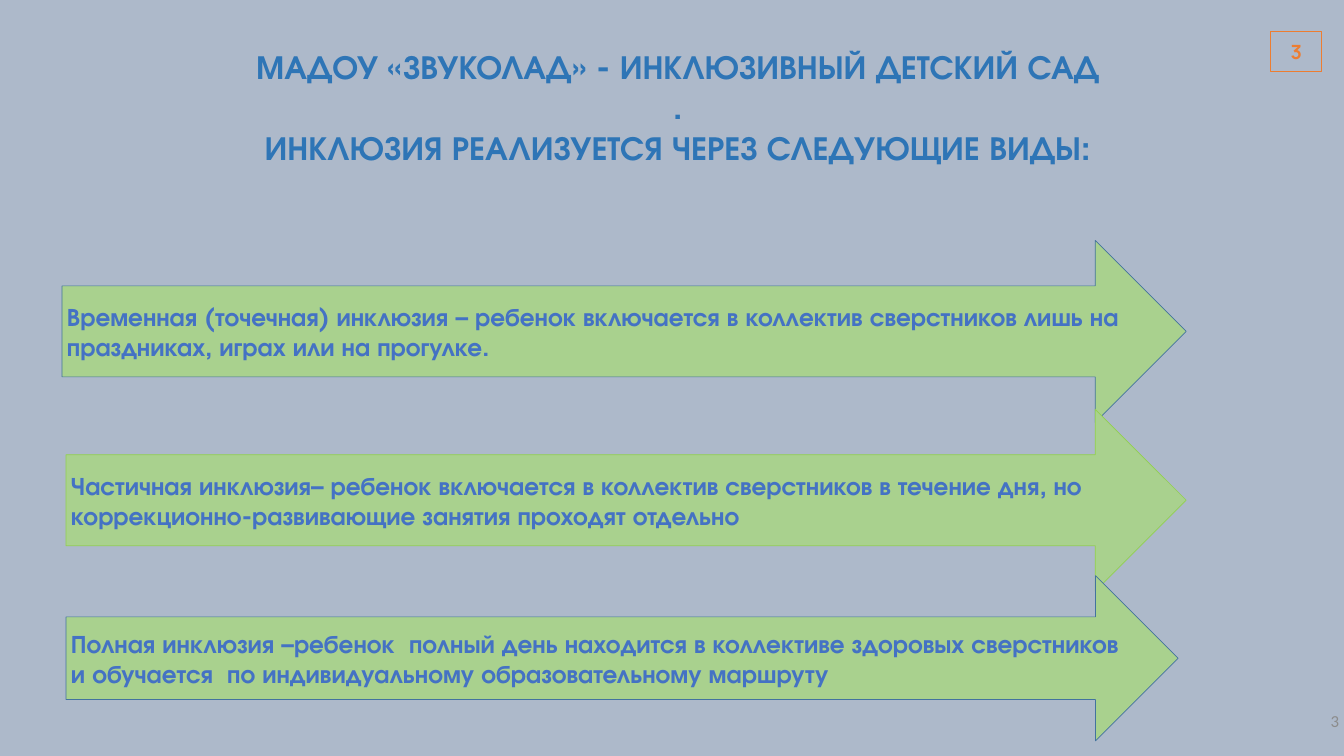
from dataclasses import dataclass

from pptx import Presentation
from pptx import util as u
from pptx.dml.color import RGBColor
from pptx.enum import shapes, text


@dataclass(frozen=True)
class Theme:
    background: str = "ADB9CA"
    arrow_fill: str = "A9D18E"
    blue_line: str = "43739E"
    green_line: str = "92D050"
    accent: str = "ED7D31"
    title: str = "2E75B6"
    body: str = "4472C4"
    muted: str = "8C8C8C"
    heading_font: str = "TeX Gyre Adventor"
    badge_font: str = "Manrope"
    number_font: str = "Calibri"
    title_size: int = 48
    body_size: int = 36
    badge_size: int = 28
    number_size: int = 24


class SlideBuilder:
    """Holds the theme and the current slide."""

    def __init__(self, prs, theme):
        self.theme = theme
        self.s = prs.slides.add_slide(prs.slide_layouts[5])
        fill = self.s.background.fill
        fill.solid()
        fill.fore_color.rgb = RGBColor.from_string(theme.background)

    def set_text(self, sp, lines, font, size, color, align, bold=True, **frame):
        tf = sp.text_frame
        frame = {"word_wrap": True, "auto_size": text.MSO_AUTO_SIZE.NONE,
                 "vertical_anchor": text.MSO_ANCHOR.MIDDLE, **frame}
        for name, value in frame.items():
            setattr(tf, name, value)
        tf.text = "\n".join(lines)
        for p in tf.paragraphs:
            p.alignment = align
            for r in p.runs:
                for name, value in {"name": font, "size": u.Pt(size), "bold": bold}.items():
                    setattr(r.font, name, value)
                r.font.color.rgb = RGBColor.from_string(color)

    def shape(self, kind, box, line, width, fill=None):
        sp = self.s.shapes.add_shape(kind, *map(u.Inches, box))
        sp.shadow.inherit = False
        if fill:
            sp.fill.solid()
            sp.fill.fore_color.rgb = RGBColor.from_string(fill)
        else:
            sp.fill.background()
        sp.line.color.rgb = RGBColor.from_string(line)
        sp.line.width = u.Pt(width)
        return sp

    def title(self, box, lines):
        t, sp = self.theme, self.s.shapes.title
        for name, value in zip(("left", "top", "width", "height"), box):
            setattr(sp, name, u.Inches(value))
        self.set_text(sp, lines, t.heading_font, t.title_size, t.title,
                      text.PP_ALIGN.CENTER, vertical_anchor=text.MSO_ANCHOR.TOP)

    def arrow(self, box, line, words):
        t = self.theme
        sp = self.shape(shapes.MSO_SHAPE.RIGHT_ARROW, box, line, 1, t.arrow_fill)
        self.set_text(sp, [words], t.heading_font, t.body_size, t.body, text.PP_ALIGN.LEFT)

    def badge(self, box, words):
        t = self.theme
        sp = self.shape(shapes.MSO_SHAPE.RECTANGLE, box, t.accent, 1.5)
        self.set_text(sp, [words], t.badge_font, t.badge_size, t.accent,
                      text.PP_ALIGN.CENTER, word_wrap=False)

    def page_number(self, box, words):
        t = self.theme
        sp = self.s.shapes.add_textbox(*map(u.Inches, box))
        self.set_text(sp, [words], t.number_font, t.number_size, t.muted,
                      text.PP_ALIGN.RIGHT, bold=False)


def main():
    prs = Presentation()
    prs.slide_width, prs.slide_height = u.Inches(26.66), u.Inches(15)
    theme = Theme()
    slide = SlideBuilder(prs, theme)

    # Heading
    slide.title((0.79, 0.86, 25.31, 2.52), [
        "МАДОУ «ЗВУКОЛАД» - ИНКЛЮЗИВНЫЙ ДЕТСКИЙ САД",
        ".",
        "ИНКЛЮЗИЯ РЕАЛИЗУЕТСЯ ЧЕРЕЗ СЛЕДУЮЩИЕ ВИДЫ:",
    ])

    # Kinds of inclusion
    inclusion_kinds = [
        ((1.23, 4.77, 22.3, 3.61), theme.blue_line,
         "Временная (точечная) инклюзия – ребенок включается в коллектив "
         "сверстников лишь на праздниках, играх или на прогулке."),
        ((1.31, 8.12, 22.22, 3.61), theme.green_line,
         "Частичная инклюзия– ребенок включается в коллектив сверстников "
         "в течение дня, но коррекционно-развивающие занятия проходят отдельно"),
        ((1.31, 11.42, 22.06, 3.28), theme.blue_line,
         "Полная инклюзия –ребенок  полный день находится в коллективе здоровых "
         "сверстников и обучается  по индивидуальному образовательному маршруту"),
    ]
    for box, line, words in inclusion_kinds:
        slide.arrow(box, line, words)

    # Slide numbers: framed badge and footer
    slide.badge((25.21, 0.62, 1.01, 0.8), "3")
    slide.page_number((20.66, 13.9, 6, 0.8), "3")

    prs.save("out.pptx")


if __name__ == "__main__":
    main()
